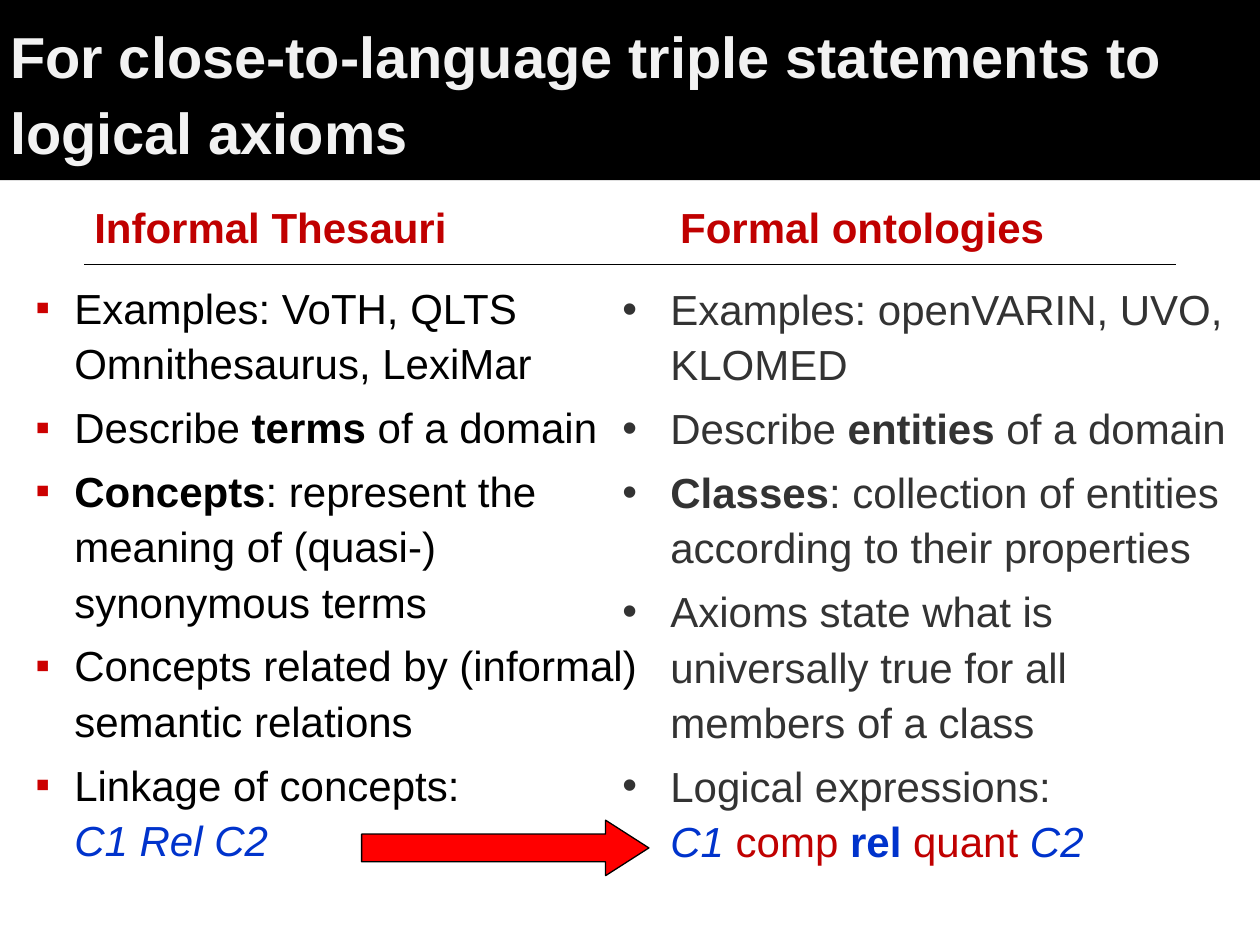
from lxml import etree
from pptx import Presentation
from pptx.dml.color import RGBColor
from pptx.enum.shapes import MSO_CONNECTOR, MSO_SHAPE
from pptx.enum.text import MSO_ANCHOR, MSO_AUTO_SIZE, PP_ALIGN
from pptx.oxml.ns import qn
from pptx.util import Inches, Pt

STRAIGHT = MSO_CONNECTOR.STRAIGHT
RIGHT_ARROW = MSO_SHAPE.RIGHT_ARROW
MIDDLE = MSO_ANCHOR.MIDDLE
NO_AUTOFIT = MSO_AUTO_SIZE.NONE
LEFT = PP_ALIGN.LEFT

BLACK, WHITE_SMOKE, GRAY = "000000", "F2F2F2", "333333"
RED, BLUE = "C00000", "0033CC"


def color(value):
    return RGBColor.from_string(value)


def add_run(paragraph, text, size, font_color, style=""):
    """Add one Arial run; style may hold b (bold) and i (italic)."""
    run = paragraph.add_run()
    run.text = text
    run.font.name = "Arial"
    run.font.size = Pt(size)
    run.font.color.rgb = color(font_color)
    run.font.bold = "b" in style
    run.font.italic = "i" in style


presentation = Presentation()
presentation.slide_width = Inches(10)
presentation.slide_height = Inches(7.5)
slide = presentation.slides.add_slide(presentation.slide_layouts[3])
title, thesauri_body, ontologies_body = slide.placeholders

# Title band
title.left, title.top = Inches(0), Inches(0)
title.width, title.height = Inches(10), Inches(1.43)
title.fill.solid()
title.fill.fore_color.rgb = color(BLACK)
frame = title.text_frame
frame.auto_size = NO_AUTOFIT
frame.vertical_anchor = MIDDLE
frame.margin_left = frame.margin_right = Inches(0.08)
frame.margin_top = frame.margin_bottom = Inches(0.04)
paragraph = frame.paragraphs[0]
paragraph.alignment = LEFT
paragraph.line_spacing = 1.1
add_run(paragraph, "For close-to-language triple statements to logical axioms",
        33, WHITE_SMOKE, "b")

# Bullet columns: each item is a list of (text, style, colour) runs;
# None stands for a line break, and a missing colour for the column's own.
thesauri_items = [
    [("Examples: VoTH, QLTS Omnithesaurus, LexiMar",)],
    [("Describe ",), ("terms", "b"), (" of a domain",)],
    [("Concepts", "b"),
     (": represent the meaning of (quasi-) synonymous terms",)],
    [("Concepts related by (informal) semantic relations",)],
    [("Linkage of concepts:",), None, ("C1 Rel C2", "i", BLUE)],
]
ontologies_items = [
    [("Examples: openVARIN, UVO, KLOMED",)],
    [("Describe ",), ("entities", "b"), (" of a domain",)],
    [("Classes", "b"),
     (": collection of entities according to their properties",)],
    [("Axioms state what is universally true for all members of a class",)],
    [("Logical expressions:",), None, ("C1 ", "i", BLUE),
     ("comp ", "", RED), ("rel ", "b", BLUE), ("quant ", "", RED),
     ("C2", "i", BLUE)],
]
columns = [
    (thesauri_body, thesauri_items, 0.2, 4.96, (0.08, 0.04), 0.31,
     "▪", "CC0000", BLACK),
    (ontologies_body, ontologies_items, 4.84, 5.16, (0.1, 0.05), 0.38,
     "•", GRAY, GRAY),
]
for (body, items, left, width, margins, indent,
     bullet, bullet_color, text_color) in columns:
    body.left, body.top = Inches(left), Inches(2.16)
    body.width, body.height = Inches(width), Inches(4.35)
    frame = body.text_frame
    frame.auto_size = NO_AUTOFIT
    frame.margin_left = frame.margin_right = Inches(margins[0])
    frame.margin_top = frame.margin_bottom = Inches(margins[1])
    for index, item in enumerate(items):
        paragraph = frame.add_paragraph() if index else frame.paragraphs[0]
        paragraph.line_spacing = 1.1
        paragraph.space_before = Pt(4.8)
        properties = paragraph._p.get_or_add_pPr()
        properties.set("marL", str(Inches(indent)))
        properties.set("indent", str(-Inches(indent)))
        bullet_fill = etree.SubElement(properties, qn("a:buClr"))
        etree.SubElement(bullet_fill, qn("a:srgbClr"), val=bullet_color)
        etree.SubElement(properties, qn("a:buFont"), typeface="Arial")
        etree.SubElement(properties, qn("a:buChar"), char=bullet)
        for part in item:
            if part is None:
                paragraph.add_line_break()
                continue
            text, style, run_color = part + ("", text_color)[len(part) - 1:]
            add_run(paragraph, text, 24, run_color, style)

# Column headings, the second one at a tab stop
headings = slide.shapes.add_textbox(Inches(0.65), Inches(1.55),
                                    Inches(7.89), Inches(0.5))
headings.text_frame.word_wrap = True
paragraph = headings.text_frame.paragraphs[0]
tab_list = etree.SubElement(paragraph._p.get_or_add_pPr(), qn("a:tabLst"))
etree.SubElement(tab_list, qn("a:tab"), pos=str(Inches(4.65)), algn="l")
add_run(paragraph, "Informal Thesauri\tFormal ontologies", 24, RED, "b")

# Rule below the headings
rule = slide.shapes.add_connector(STRAIGHT, Inches(0.67), Inches(2.1),
                                  Inches(9.33), Inches(2.1))
rule.line.color.rgb = color(BLACK)
rule.line.width = Pt(0.75)
etree.SubElement(rule._element.spPr, qn("a:effectLst"))

# Arrow from the informal to the logical expression
arrow = slide.shapes.add_shape(RIGHT_ARROW, Inches(2.87), Inches(6.51),
                               Inches(2.28), Inches(0.44))
arrow.shadow.inherit = False
arrow.adjustments[0] = 0.5
arrow.adjustments[1] = 0.78
arrow.fill.solid()
arrow.fill.fore_color.rgb = color("FF0000")
arrow.line.color.rgb = color(BLACK)
arrow.line.width = Pt(0.75)

presentation.save("out.pptx")
